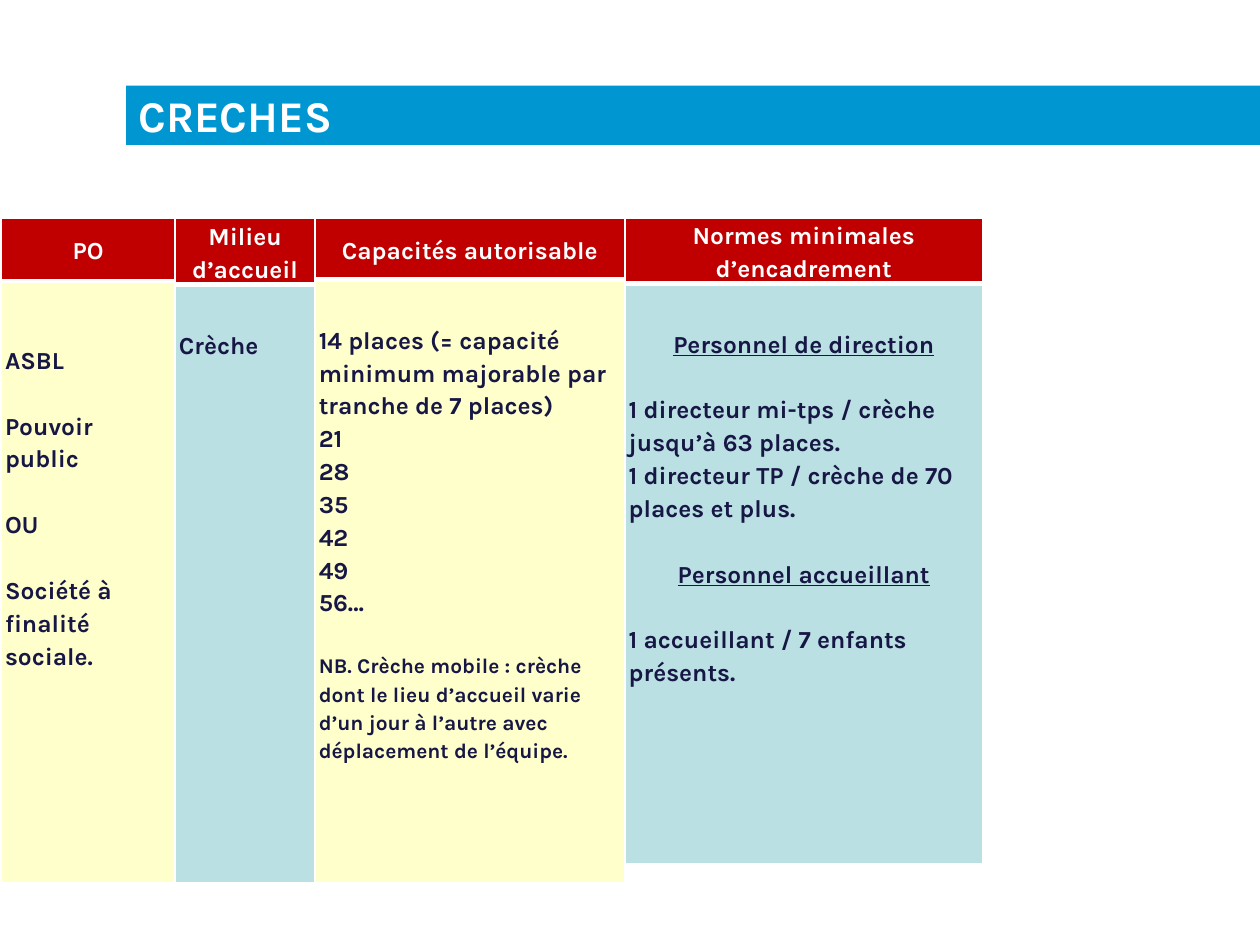
from dataclasses import dataclass

import lxml.etree
import pptx
import pptx.dml.color
import pptx.enum.text
import pptx.oxml.ns
import pptx.util

Inches = pptx.util.Inches
Pt = pptx.util.Pt
ALIGN = pptx.enum.text.PP_ALIGN
ANCHOR = pptx.enum.text.MSO_ANCHOR

FONT = "Karla"
WHITE, NAVY, RED, BLUE = "FFFFFF", "171745", "C00000", "0096D2"
YELLOW, TEAL = "FFFFCC", "BBE0E3"
TABLE_TOP = 1.73
BLANK_LINE = 18.8  # points, one line of 14 point text


@dataclass(frozen=True)
class Line:
    text: str
    gap: float = 0
    size: float = 14
    heading: bool = False


@dataclass(frozen=True)
class Column:
    left: float
    width: float
    header_height: float
    body_height: float
    fill: str
    body_inset: float
    header: tuple[str, ...]
    body: tuple[Line, ...]


COLUMNS = (
    Column(0.01, 1.38, 0.5, 4.78, YELLOW, 0.49, ("PO",), (
        Line("ASBL"),
        Line("Pouvoir public", BLANK_LINE),
        Line("OU", BLANK_LINE),
        Line("Société à finalité sociale.", BLANK_LINE),
    )),
    Column(1.39, 1.11, 0.53, 4.75, TEAL, 0.34, ("Milieu d’accueil",), (
        Line("Crèche"),
    )),
    Column(2.5, 2.46, 0.49, 4.79, YELLOW, 0.34, ("Capacités autorisable",), (
        Line("14 places (= capacité minimum majorable par tranche de 7 places)"),
        *(Line(places) for places in ("21", "28", "35", "42", "49", "56…")),
        Line("NB. Crèche mobile : crèche dont le lieu d’accueil varie d’un jour "
             "à l’autre avec déplacement de l’équipe.", BLANK_LINE, 12),
    )),
    Column(4.96, 2.84, 0.52, 4.6, TEAL, 0.34, ("Normes minimales", "d’encadrement"), (
        Line("Personnel de direction", heading=True),
        Line("1 directeur mi-tps / crèche jusqu’à 63 places.", BLANK_LINE),
        Line("1 directeur TP / crèche de 70 places et plus."),
        Line("Personnel accueillant", BLANK_LINE, heading=True),
        Line("1 accueillant / 7 enfants présents.", BLANK_LINE),
    )),
)


def color(value: str) -> pptx.dml.color.RGBColor:
    return pptx.dml.color.RGBColor.from_string(value)


def set_font(paragraph, size: float, font_color: str) -> None:
    font = paragraph.font
    font.name = FONT
    font.size = Pt(size)
    font.bold = True
    font.color.rgb = color(font_color)


def set_borders(cell, top: float, bottom: float) -> None:
    """Draw white borders; must run before the cell gets its fill."""
    properties = cell._tc.get_or_add_tcPr()
    for side, width in (("L", 1), ("R", 1), ("T", top), ("B", bottom)):
        border = lxml.etree.SubElement(
            properties, pptx.oxml.ns.qn(f"a:ln{side}"), w=str(Pt(width)))
        fill = lxml.etree.SubElement(border, pptx.oxml.ns.qn("a:solidFill"))
        lxml.etree.SubElement(fill, pptx.oxml.ns.qn("a:srgbClr"), val=WHITE)


def format_cell(cell, fill: str, top_inset: float) -> None:
    cell.margin_left = cell.margin_right = Inches(0.03)
    cell.margin_top = Inches(top_inset)
    cell.margin_bottom = 0
    cell.fill.solid()
    cell.fill.fore_color.rgb = color(fill)


def write_lines(cell, lines: tuple[Line, ...], font_color: str) -> None:
    frame = cell.text_frame
    for index, line in enumerate(lines):
        paragraph = frame.add_paragraph() if index else frame.paragraphs[0]
        paragraph.text = line.text
        paragraph.line_spacing = 1.15
        if line.gap:
            paragraph.space_before = Pt(line.gap)
        set_font(paragraph, line.size, font_color)
        if line.heading:
            paragraph.alignment = ALIGN.CENTER
            paragraph.font.underline = font_color == NAVY


def add_column(slide, column: Column) -> None:
    table = slide.shapes.add_table(
        2, 1, Inches(column.left), Inches(TABLE_TOP), Inches(column.width),
        Inches(column.header_height + column.body_height)).table
    table.columns[0].width = Inches(column.width)
    table.rows[0].height = Inches(column.header_height)
    table.rows[1].height = Inches(column.body_height)

    header, body = table.cell(0, 0), table.cell(1, 0)
    set_borders(header, 1, 3)
    format_cell(header, RED, 0)
    header.vertical_anchor = ANCHOR.MIDDLE
    write_lines(header, tuple(Line(text, heading=True) for text in column.header), WHITE)

    set_borders(body, 3, 1)
    format_cell(body, column.fill, column.body_inset)
    write_lines(body, column.body, NAVY)


def format_title(title) -> None:
    title.left, title.top = Inches(1), Inches(0.68)
    title.width, title.height = Inches(9), Inches(0.47)
    title.fill.solid()
    title.fill.fore_color.rgb = color(BLUE)
    frame = title.text_frame
    frame.text = "CRECHES"
    frame.vertical_anchor = ANCHOR.MIDDLE
    paragraph = frame.paragraphs[0]
    paragraph.alignment = ALIGN.LEFT
    set_font(paragraph, 25, WHITE)


def main() -> None:
    presentation = pptx.Presentation()
    presentation.slide_width = Inches(10)
    presentation.slide_height = Inches(7.5)
    slide = presentation.slides.add_slide(presentation.slide_layouts[5])
    format_title(slide.shapes.title)
    for column in COLUMNS:
        add_column(slide, column)
    presentation.save("out.pptx")


if __name__ == "__main__":
    main()
